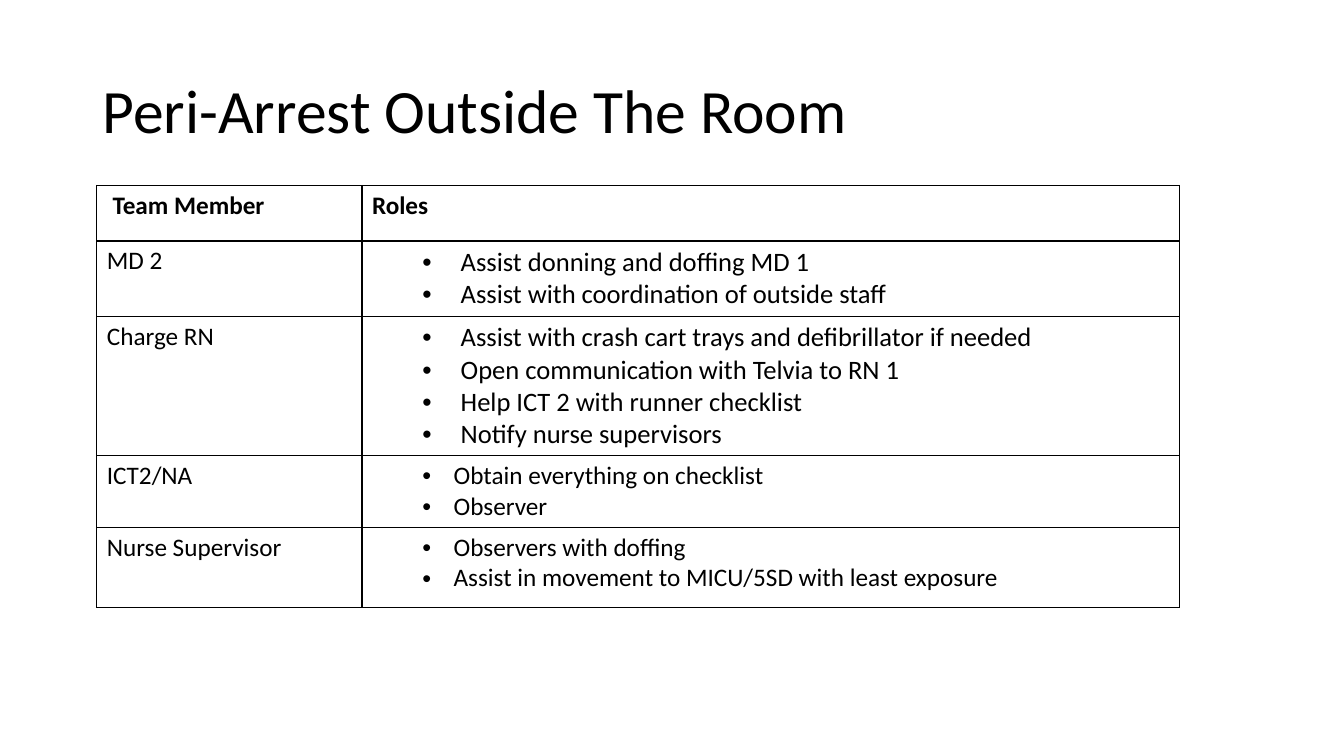
from lxml import etree
from pptx import Presentation
from pptx.dml.color import RGBColor
from pptx.enum.text import MSO_ANCHOR
from pptx.oxml.ns import qn
from pptx.util import Inches, Pt

MIDDLE = MSO_ANCHOR.MIDDLE
FONT = "Calibri"
BLACK = "000000"
WHITE = "FFFFFF"


def color(hex_code):
    return RGBColor.from_string(hex_code)


def style(paragraph, size, bold=False):
    for run in paragraph.runs:
        run.font.name = FONT
        run.font.size = Pt(size)
        run.font.bold = bold
        run.font.color.rgb = color(BLACK)


prs = Presentation()
prs.slide_width = Inches(13.33)
prs.slide_height = Inches(7.5)
slide = prs.slides.add_slide(prs.slide_layouts[6])

# Title
title = slide.shapes.add_textbox(Inches(0.92), Inches(0.4), Inches(11.5), Inches(1.45)).text_frame
title.word_wrap = True
title.vertical_anchor = MIDDLE
title.text = "Peri-Arrest Outside The Room"
title.paragraphs[0].line_spacing = 0.9
style(title.paragraphs[0], 44)

# Team members: name, row height, role text size, bullet indent, roles
team = [
    ("MD 2", 0.75, 19, 0.38,
     ["Assist donning and doffing MD 1", "Assist with coordination of outside staff"]),
    ("Charge RN", 1.38, 19, 0.38,
     ["Assist with crash cart trays and defibrillator if needed",
      "Open communication with Telvia to RN 1",
      "Help ICT 2 with runner checklist",
      "Notify nurse supervisors"]),
    ("ICT2/NA", 0.71, 18, 0.31,
     ["Obtain everything on checklist", "Observer"]),
    ("Nurse Supervisor", 0.8, 18, 0.31,
     ["Observers with doffing", "Assist in movement to MICU/5SD with least exposure"]),
]

# Roles table
roles_table = slide.shapes.add_table(
    len(team) + 1, 2, Inches(0.96), Inches(1.84), Inches(10.74), Inches(4.19)).table
roles_table.first_row = False
roles_table.horz_banding = False
roles_table.columns[0].width = Inches(2.63)
roles_table.columns[1].width = Inches(8.11)

# Header row
roles_table.rows[0].height = Inches(0.55)
for column, heading in enumerate([" Team Member", "Roles"]):
    header = roles_table.cell(0, column).text_frame
    header.text = heading
    style(header.paragraphs[0], 18, bold=True)

# Member rows with bulleted roles
for row, (member, height, size, indent, roles) in enumerate(team, start=1):
    roles_table.rows[row].height = Inches(height)
    member_name = roles_table.cell(row, 0).text_frame
    member_name.text = member
    style(member_name.paragraphs[0], 18)

    duties = roles_table.cell(row, 1).text_frame
    duties.text = "\n".join(roles)
    for duty in duties.paragraphs:
        duty.level = 1
        style(duty, size)
        properties = duty._p.get_or_add_pPr()
        properties.set("marL", str(Inches(0.5 + indent)))
        properties.set("indent", str(-Inches(indent)))
        etree.SubElement(properties, qn("a:buFont"), typeface="Arial")
        etree.SubElement(properties, qn("a:buChar"), char="•")

# Thin black borders on plain white cells
for cell in roles_table.iter_cells():
    cell_properties = cell._tc.get_or_add_tcPr()
    for side in ("a:lnL", "a:lnR", "a:lnT", "a:lnB"):
        border = etree.SubElement(cell_properties, qn(side), w=str(Pt(1)))
        border_fill = etree.SubElement(border, qn("a:solidFill"))
        etree.SubElement(border_fill, qn("a:srgbClr"), val=BLACK)
    cell.fill.solid()
    cell.fill.fore_color.rgb = color(WHITE)

prs.save("out.pptx")
